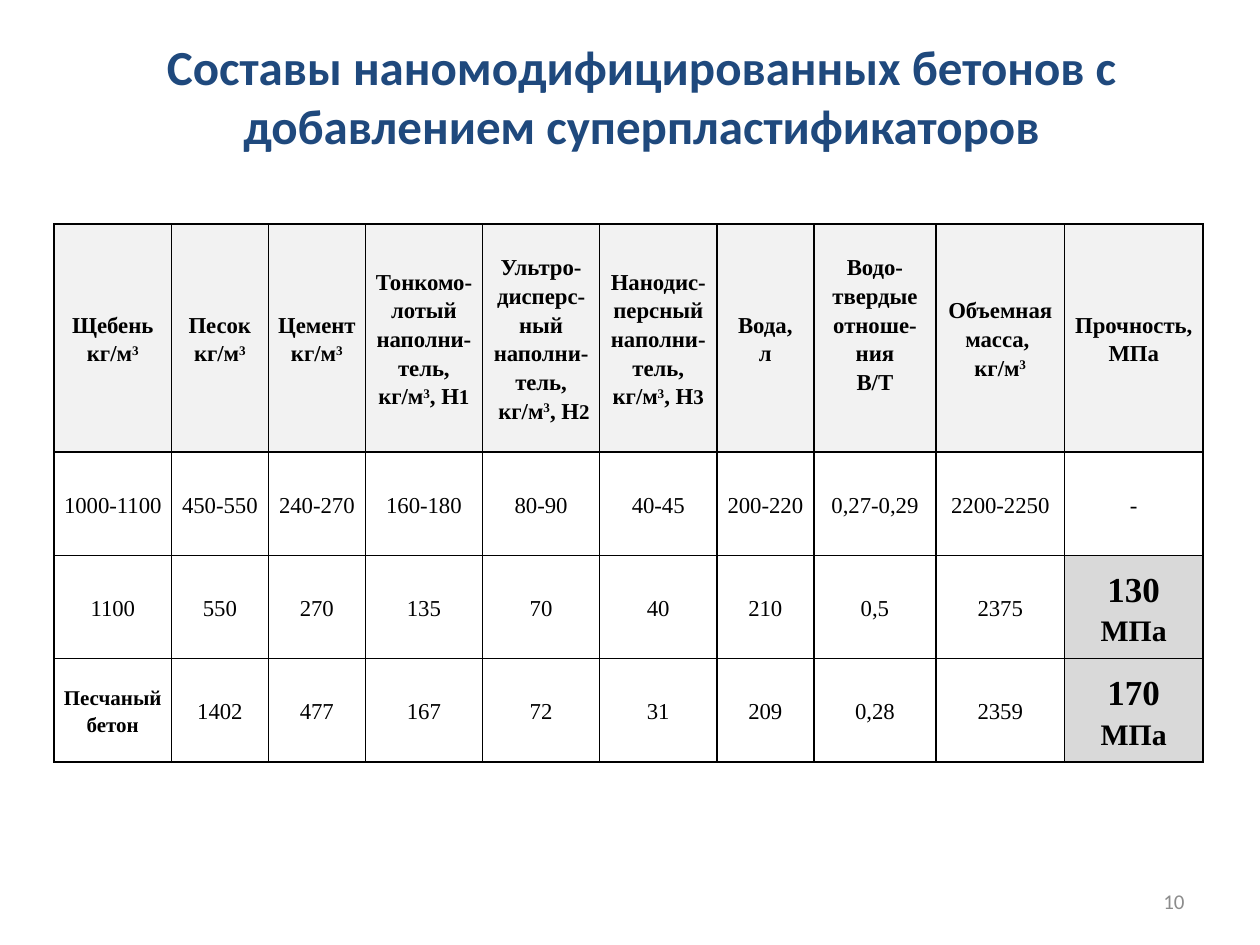
from lxml import etree
from pptx import Presentation
from pptx.dml.color import RGBColor
from pptx.enum.text import MSO_ANCHOR, PP_ALIGN
from pptx.oxml.ns import qn
from pptx.util import Inches, Pt

CENTER, RIGHT = PP_ALIGN.CENTER, PP_ALIGN.RIGHT
MIDDLE = MSO_ANCHOR.MIDDLE
WIDTH, HEIGHT = 10, 7.5

NAVY, GRAY, BLACK, WHITE = "1F497D", "8C8C8C", "000000", "FFFFFF"
HEADER_FILL, STRENGTH_FILL = "F2F2F2", "D9D9D9"

COLUMN_WIDTHS = [0.93, 0.77, 0.77, 0.93, 0.93, 0.93, 0.77, 0.97, 1.02, 1.1]
ROW_HEIGHTS = [1.81, 0.82, 0.82, 0.82]
HEADERS = [
    "Щебень\nкг/м³",
    "Песок\nкг/м³",
    "Цемент кг/м³",
    "Тонкомо-лотый наполни-тель, кг/м³, H1",
    "Ультро-дисперс-ный наполни-тель,\n кг/м³, H2",
    "Нанодис-персный наполни-тель,\nкг/м³, H3",
    "Вода,\nл",
    "Водо-твердые отноше-ния\nВ/Т",
    "Объемная масса, \nкг/м³",
    "Прочность,\nМПа",
]
MIXES = [
    ["1000-1100", "450-550", "240-270", "160-180", "80-90", "40-45",
     "200-220", "0,27-0,29", "2200-2250", "-"],
    ["1100", "550", "270", "135", "70", "40", "210", "0,5", "2375"],
    ["Песчаный бетон", "1402", "477", "167", "72", "31", "209", "0,28", "2359"],
]
STRENGTHS = {2: "130 ", 3: "170 "}
RATIO_COLUMN, STRENGTH_COLUMN = 7, 9


def color(value):
    return RGBColor.from_string(value)


class SlideBuilder:
    """Holds the fonts and the current slide."""

    heading_font, table_font = "Calibri", "Times New Roman"

    def __init__(self, slide):
        self.slide = slide

    def style(self, paragraph, font, size, shade, bold=False, align=CENTER):
        paragraph.alignment = align
        paragraph.font.name = font
        paragraph.font.size = Pt(size)
        paragraph.font.bold = bold
        paragraph.font.color.rgb = color(shade)

    def text(self, box, content, size, shade, bold=False, align=CENTER):
        """Box is left, top, width, height as shares of the slide."""
        left, top, width, height = box
        shape = self.slide.shapes.add_textbox(
            Inches(left * WIDTH), Inches(top * HEIGHT),
            Inches(width * WIDTH), Inches(height * HEIGHT))
        frame = shape.text_frame
        frame.word_wrap = True
        frame.vertical_anchor = MIDDLE
        paragraph = frame.paragraphs[0]
        paragraph.text = content
        self.style(paragraph, self.heading_font, size, shade, bold, align)

    def table(self, left, top, widths, heights):
        table = self.slide.shapes.add_table(
            len(heights), len(widths), Inches(left * WIDTH), Inches(top * HEIGHT),
            Inches(sum(widths)), Inches(sum(heights))).table
        for column, width in zip(table.columns, widths):
            column.width = Inches(width)
        for row, height in zip(table.rows, heights):
            row.height = Inches(height)
        return table

    def borders(self, cell):
        properties = cell._tc.get_or_add_tcPr()
        for position, side in enumerate(("a:lnL", "a:lnR", "a:lnT", "a:lnB")):
            line = etree.Element(qn(side), w=str(Pt(1)))
            fill = etree.SubElement(line, qn("a:solidFill"))
            etree.SubElement(fill, qn("a:srgbClr"), val=BLACK)
            properties.insert(position, line)

    def cell(self, cell, lines, size=13, bold=False, fill=WHITE):
        """Each line is a list of (text, size, raised) runs."""
        cell.fill.solid()
        cell.fill.fore_color.rgb = color(fill)
        cell.vertical_anchor = MIDDLE
        cell.margin_left = cell.margin_right = Inches(0.07)
        cell.margin_top = cell.margin_bottom = 0
        self.borders(cell)
        frame = cell.text_frame
        for number, runs in enumerate(lines):
            paragraph = frame.add_paragraph() if number else frame.paragraphs[0]
            self.style(paragraph, self.table_font, size, BLACK, bold)
            paragraph.line_spacing = 1.15
            for content, run_size, raised in runs:
                run = paragraph.add_run()
                run.text = content
                if run_size != size:
                    run.font.size = Pt(run_size)
                if raised:
                    run._r.get_or_add_rPr().set("baseline", "30000")


def header_runs(line):
    """Raise the cubic sign and make the filler number smaller."""
    before, cube, after = line.partition("³")
    runs = [(before, 13, False)]
    if cube:
        runs.append(("3", 13, True))
    if after:
        runs += [(after[:-1], 13, False), (after[-1], 12, False)]
    return runs


def main():
    presentation = Presentation()
    presentation.slide_width, presentation.slide_height = Inches(WIDTH), Inches(HEIGHT)
    blank = presentation.slide_layouts[6]
    builder = SlideBuilder(presentation.slides.add_slide(blank))

    # Title
    builder.text((0.059, 0.017, 0.9, 0.167),
                 "Составы наномодифицированных бетонов с добавлением суперпластификаторов",
                 28, NAVY, bold=True)

    # Table header
    table = builder.table(0.043, 0.237, COLUMN_WIDTHS, ROW_HEIGHTS)
    for column, header in enumerate(HEADERS):
        lines = [header_runs(line) for line in header.split("\n")]
        builder.cell(table.cell(0, column), lines, bold=True, fill=HEADER_FILL)
    table.cell(0, RATIO_COLUMN).margin_bottom = Inches(0.23)

    # Concrete mixes
    for row, mix in enumerate(MIXES, start=1):
        for column, value in enumerate(mix):
            named = value[0].isalpha()
            size = 12 if named else 13
            builder.cell(table.cell(row, column), [[(value, size, False)]], size, named)

    # Strength results
    for row, strength in STRENGTHS.items():
        runs = [(strength, 20, False), ("МПа", 17, False)]
        builder.cell(table.cell(row, STRENGTH_COLUMN), [runs], 20, True, STRENGTH_FILL)

    # Slide number
    builder.text((0.717, 0.927, 0.233, 0.053), "10", 12, GRAY, align=RIGHT)

    presentation.save("out.pptx")


if __name__ == "__main__":
    main()
